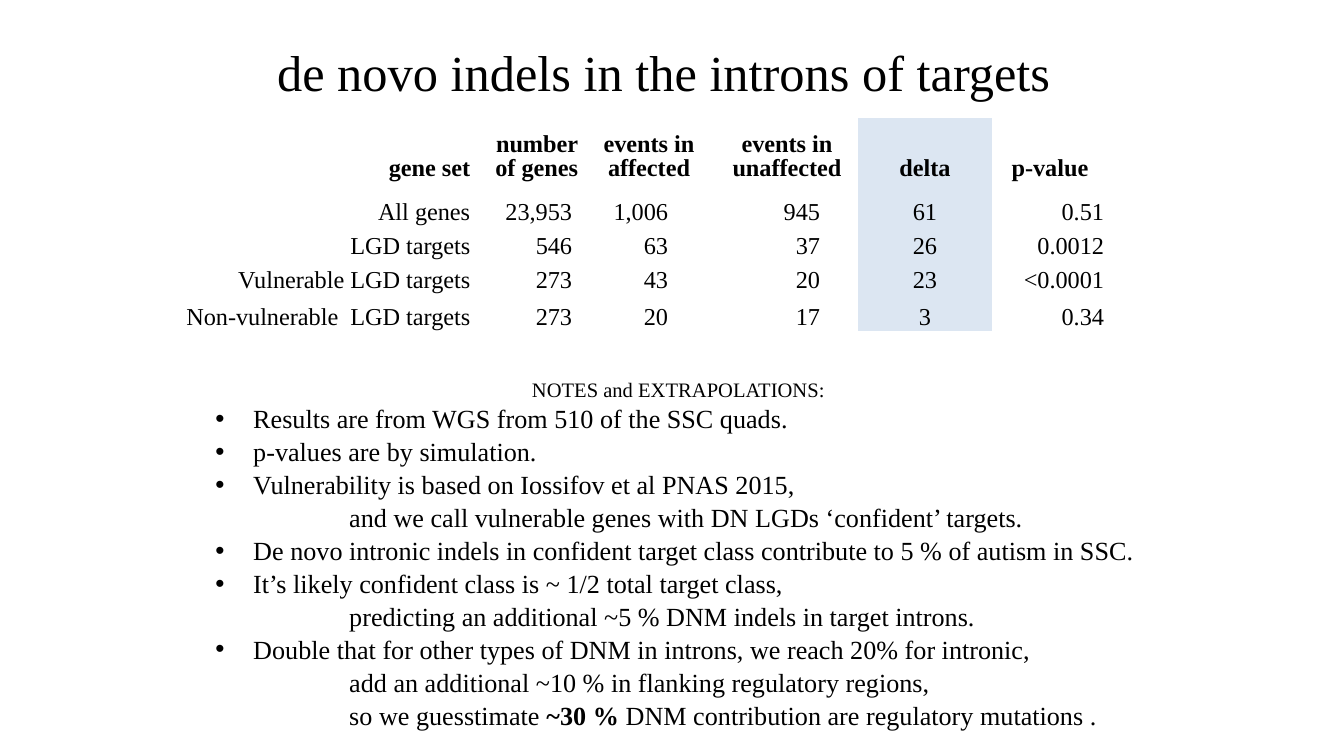
from dataclasses import dataclass

from pptx import Presentation
from pptx import util as u
from pptx.dml.color import RGBColor
from pptx.enum import text as t
from pptx.oxml.ns import qn
from pptx.oxml.xmlchemy import OxmlElement

EMU_PER_PX = 914400 / 134.4
FONT = "Times New Roman"
COLORS = {"ink": "000000", "delta": "DCE6F2"}
NO_TABLE_STYLE = "{2D5ABB26-0587-4C30-8999-92F81FD0307C}"
LEFT, CENTER, RIGHT = t.PP_ALIGN.LEFT, t.PP_ALIGN.CENTER, t.PP_ALIGN.RIGHT


@dataclass(frozen=True)
class Column:
    heading: str
    width: int
    values: tuple[str, ...]
    heading_align: t.PP_ALIGN = CENTER
    value_align: t.PP_ALIGN = RIGHT
    value_inset: int = 4
    fill: str = ""


@dataclass(frozen=True)
class Note:
    spans: tuple[str, ...]
    bullet: bool = True
    bold_span: int = -1


COLUMNS = (
    Column("gene set", 313,
           ("All genes", "LGD targets", "Vulnerable LGD targets",
            "Non-vulnerable  LGD targets"), heading_align=RIGHT),
    Column("number\nof genes", 108,
           (" 23,953 ", " 546 ", " 273 ", " 273 "), heading_align=RIGHT),
    Column("events in affected", 134,
           (" 1,006 ", " 63 ", " 43 ", " 20 "), value_inset=42),
    Column("events in unaffected", 142, ("945", "37", "20", "17"), value_inset=38),
    Column("delta", 134, ("61", "26", "23", "3"), value_align=CENTER, fill="delta"),
    Column("p-value", 116, ("0.51", "0.0012", "<0.0001", "0.34")),
)
ROW_HEIGHTS = (64, 44, 34, 34, 37)

NOTES = (
    Note(("Results are from WGS from 510 of the SSC quads.",)),
    Note(("p-values are by simulation.",)),
    Note(("Vulnerability is based on Iossifov et al PNAS 2015,",)),
    Note(("and we call vulnerable genes with DN LGDs ‘confident’ targets.",), bullet=False),
    Note(("De novo intronic indels in confident target class contribute to 5 % of autism in SSC.",)),
    Note(("It’s likely confident class is ~ 1/2 total target class,",)),
    Note(("predicting an additional ~5 % DNM indels in target introns.",), bullet=False),
    Note(("Double that for other types of DNM in introns, we reach 20% for intronic,",)),
    Note(("add an additional ~10 % in flanking regulatory regions,",), bullet=False),
    Note(("so we guesstimate ", "~30 % ", "DNM contribution are regulatory mutations ."),
         bullet=False, bold_span=1),
)


def px(length: int) -> u.Emu:
    return u.Emu(round(length * EMU_PER_PX))


def style_span(span, size: int, bold: bool = False) -> None:
    span.font.name = FONT
    span.font.size = u.Pt(size)
    span.font.bold = bold
    span.font.color.rgb = RGBColor.from_string(COLORS["ink"])


def style_para(para, size: int, align: t.PP_ALIGN, bold: bool = False) -> None:
    para.alignment = align
    for span in para.runs:
        style_span(span, size, bold)


def add_text_box(page, left: int, top: int, width: int, height: int):
    box = page.shapes.add_textbox(px(left), px(top), px(width), px(height))
    box.text_frame.word_wrap = True
    return box.text_frame


def indent_note(para, bullet: bool) -> None:
    """Hang a bullet, or push a continuation line to the one-inch mark."""
    props = para._p.get_or_add_pPr()
    props.set("marL", str(px(38 if bullet else 134)))
    props.set("indent", str(px(-38 if bullet else 0)))
    if bullet:
        font = OxmlElement("a:buFont")
        font.set("typeface", "Arial")
        mark = OxmlElement("a:buChar")
        mark.set("char", "•")
        props.extend((font, mark))


def add_title(page) -> None:
    frame = add_text_box(page, 235, 34, 870, 74)
    frame.vertical_anchor = t.MSO_ANCHOR.MIDDLE
    frame.text = "de novo indels in the introns of targets "
    style_para(frame.paragraphs[0], 27, CENTER)


def fill_cell(cell, words: str, column: Column, heading: bool) -> None:
    cell.margin_left = px(4)
    cell.margin_right = px(4 if heading else column.value_inset)
    cell.margin_top = cell.margin_bottom = 0
    cell.vertical_anchor = t.MSO_ANCHOR.BOTTOM
    if column.fill:
        cell.fill.solid()
        cell.fill.fore_color.rgb = RGBColor.from_string(COLORS[column.fill])
    else:
        cell.fill.background()
    cell.text_frame.text = words
    for para in cell.text_frame.paragraphs:
        style_para(para, 13, column.heading_align if heading else column.value_align, heading)
        if heading:
            para.line_spacing = 0.93


def add_gene_table(page) -> None:
    table = page.shapes.add_table(
        len(ROW_HEIGHTS), len(COLUMNS), px(161), px(118),
        px(sum(column.width for column in COLUMNS)), px(sum(ROW_HEIGHTS))).table
    table.first_row = table.horz_banding = False
    table._tbl.tblPr.find(qn("a:tableStyleId")).text = NO_TABLE_STYLE
    for row, height in zip(table.rows, ROW_HEIGHTS):
        row.height = px(height)
    for x, column in enumerate(COLUMNS):
        table.columns[x].width = px(column.width)
        for y, words in enumerate((column.heading, *column.values)):
            fill_cell(table.cell(y, x), words, column, heading=y == 0)


def add_notes(page) -> None:
    frame = add_text_box(page, 202, 370, 958, 364)
    frame.auto_size = t.MSO_AUTO_SIZE.SHAPE_TO_FIT_TEXT
    frame.text = "NOTES and EXTRAPOLATIONS: "
    style_para(frame.paragraphs[0], 11, CENTER)
    for note in NOTES:
        para = frame.add_paragraph()
        para.alignment = LEFT
        para.line_spacing = 1.05
        indent_note(para, note.bullet)
        for i, words in enumerate(note.spans):
            span = para.add_run()
            span.text = words
            style_span(span, 14, i == note.bold_span)


def main() -> None:
    deck = Presentation()
    deck.slide_width, deck.slide_height = px(1344), px(756)
    page = deck.slides.add_slide(deck.slide_layouts[6])
    add_title(page)
    add_gene_table(page)
    add_notes(page)
    deck.save("out.pptx")


if __name__ == "__main__":
    main()
